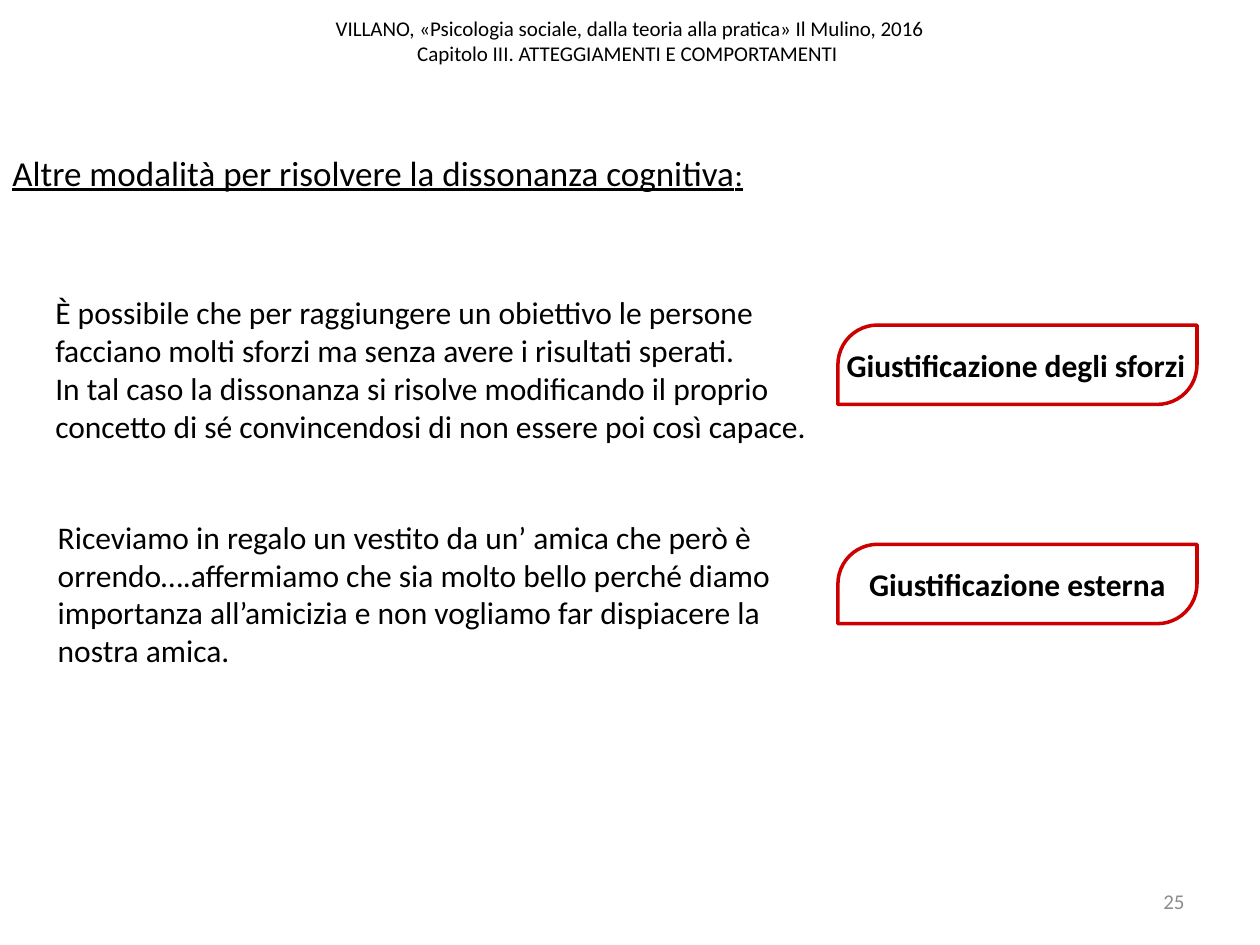
"""Build the slide on further ways to resolve cognitive dissonance."""
from pptx import Presentation
from pptx.dml.color import RGBColor
from pptx.enum.shapes import MSO_SHAPE as Shape
from pptx.enum.text import MSO_ANCHOR as Anchor, PP_ALIGN as Align
from pptx.util import Inches, Pt

BLACK = RGBColor(0x00, 0x00, 0x00)
GRAY = RGBColor(0x8C, 0x8C, 0x8C)
RED = RGBColor(0xCC, 0x00, 0x00)
FONT = "Calibri"
LABEL_LEFT, LABEL_WIDTH, LABEL_HEIGHT = 6.65, 2.85, 0.63


def add_span(para, text, size=18, color=BLACK, bold=False, underline=False):
    span = para.add_run()
    span.text = text
    font = span.font
    font.name, font.size, font.color.rgb = FONT, Pt(size), color
    font.bold, font.underline = bold, underline


def write_text(shape, text, align=Align.LEFT, anchor=Anchor.TOP, wrap=True, **style):
    frame = shape.text_frame
    frame.word_wrap, frame.vertical_anchor = wrap, anchor
    for index, line in enumerate(text.split("\n")):
        para = frame.add_paragraph() if index else frame.paragraphs[0]
        para.alignment = align
        add_span(para, line, **style)
    return para


def add_text(page, text, left, top, width, height, **style):
    box = page.shapes.add_textbox(
        Inches(left), Inches(top), Inches(width), Inches(height))
    return write_text(box, text, **style)


def add_label_frame(page, top):
    frame = page.shapes.add_shape(
        Shape.ROUND_2_DIAG_RECTANGLE, Inches(LABEL_LEFT), Inches(top),
        Inches(LABEL_WIDTH), Inches(LABEL_HEIGHT))
    frame.adjustments[0], frame.adjustments[1] = 0.5, 0
    frame.shadow.inherit = False
    frame.fill.background()
    frame.line.color.rgb, frame.line.width = RED, Pt(2)
    return frame


def main():
    deck = Presentation()
    deck.slide_width, deck.slide_height = Inches(10), Inches(7.5)
    page = deck.slides.add_slide(deck.slide_layouts[6])

    add_text(page, "VILLANO, «Psicologia sociale, dalla teoria alla pratica» Il Mulino, 2016\n"
             "Capitolo III. ATTEGGIAMENTI E COMPORTAMENTI ",
             0, -0.11, 10, 0.87, size=12, align=Align.CENTER, anchor=Anchor.MIDDLE)
    add_text(page, "25", 7.17, 6.95, 2.33, 0.4, size=12, color=GRAY,
             align=Align.RIGHT, anchor=Anchor.MIDDLE)
    heading = add_text(page, "Altre modalità per risolvere la dissonanza cognitiva",
                       0, 1.15, 6.06, 0.44, size=20, underline=True, wrap=False)
    add_span(heading, ":", underline=True)

    add_text(page, "È possibile che per raggiungere un obiettivo le persone facciano "
             "molti sforzi ma senza avere i risultati sperati.\n"
             "In tal caso la dissonanza si risolve modificando il proprio concetto di sé "
             "convincendosi di non essere poi così capace.", 0.34, 2.28, 6.39, 1.31)
    add_text(page, "Giustificazione degli sforzi", 6.62, 2.7, 2.91, 0.4,
             bold=True, wrap=False)
    add_label_frame(page, 2.58)

    add_text(page, "Riceviamo in regalo un vestito da un’ amica che però è "
             "orrendo….affermiamo che sia molto bello perché diamo importanza "
             "all’amicizia e non vogliamo far dispiacere la nostra amica.",
             0.36, 4.06, 6.22, 1.31)
    write_text(add_label_frame(page, 4.32), "Giustificazione esterna", bold=True,
               align=Align.CENTER, anchor=Anchor.MIDDLE)

    deck.save("out.pptx")


if __name__ == "__main__":
    main()
